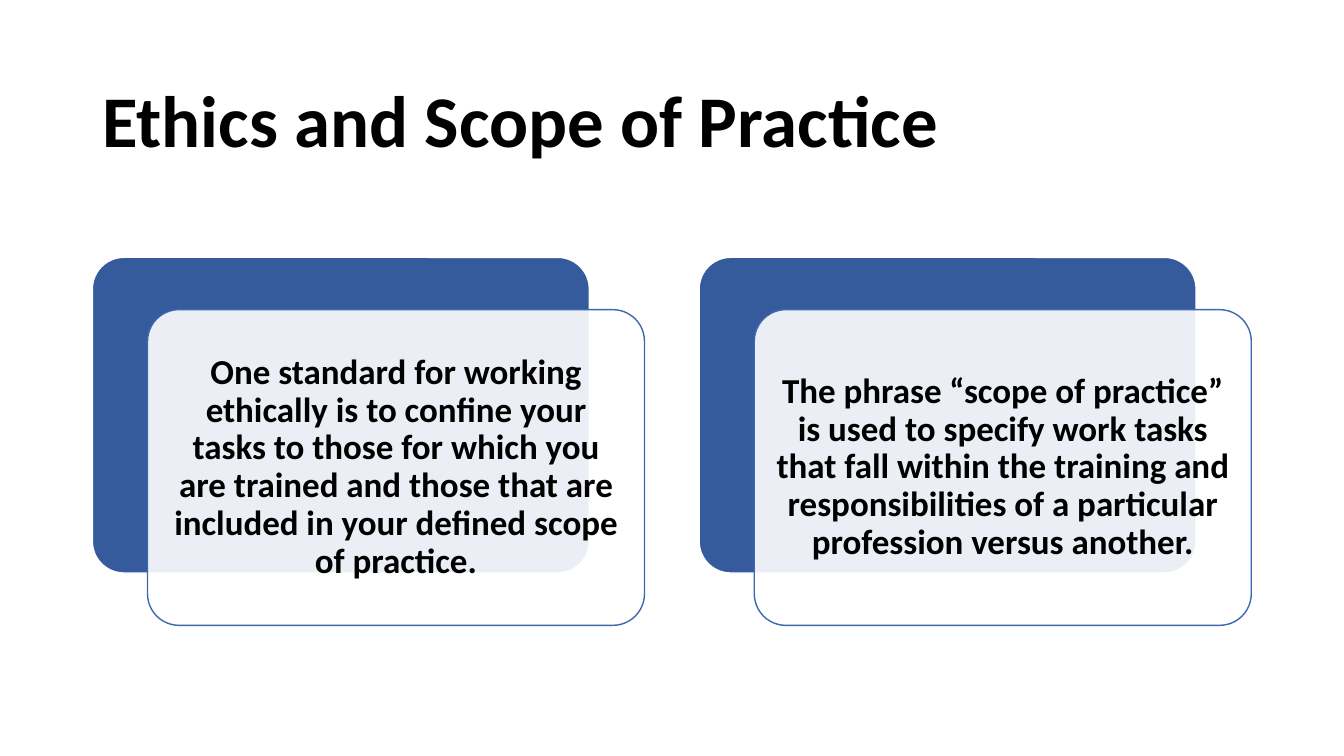
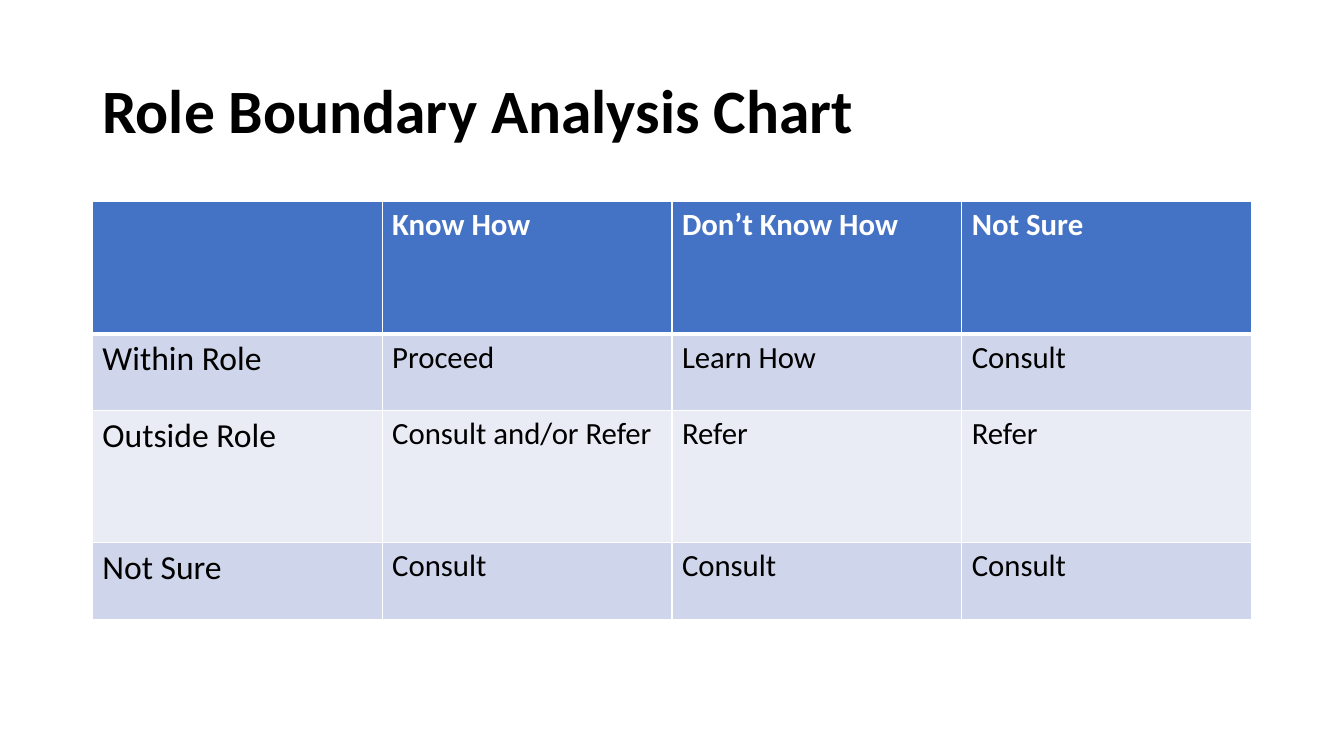
from lxml import etree
from pptx import Presentation
from pptx.dml.color import RGBColor
from pptx.enum.shapes import MSO_SHAPE
from pptx.enum.text import MSO_ANCHOR, PP_ALIGN
from pptx.oxml.ns import qn
from pptx.util import Pt

ROUNDED = MSO_SHAPE.ROUNDED_RECTANGLE
MIDDLE = MSO_ANCHOR.MIDDLE
CENTER = PP_ALIGN.CENTER

FONT = "Calibri"
BLACK = RGBColor(0x00, 0x00, 0x00)
WHITE = RGBColor(0xFF, 0xFF, 0xFF)
CARD_BLUE = RGBColor(0x36, 0x5B, 0x9D)
CARD_LINE = RGBColor(0x3E, 0x67, 0xB2)
HEADER_BLUE = RGBColor(0x44, 0x72, 0xC4)
BAND_DARK = RGBColor(0xCF, 0xD5, 0xEA)
BAND_LIGHT = RGBColor(0xE9, 0xEB, 0xF5)

LEFT, WIDTH = 66, 828
CARD_W, CARD_H, CARD_TOP = 355, 225.5, 183.8
CARD_PITCH = 433.4
FRONT_DX, FRONT_DY = 39.4, 37.4
NBSP = chr(160)  # keeps the last two words of a card together

CARDS = [
    "One standard for working ethically is to confine your tasks to those for "
    "which you are trained and those that are included in your defined scope "
    f"of{NBSP}practice.",
    "The phrase “scope of practice” is used to specify work tasks that fall "
    "within the training and responsibilities of a particular profession "
    f"versus{NBSP}another.",
]
ROWS = [
    ["", "Know How", "Don’t Know How", "Not Sure"],
    ["Within Role", "Proceed", "Learn How", "Consult"],
    ["Outside Role", "Consult and/or Refer", "Refer", "Refer"],
    ["Not Sure", "Consult", "Consult", "Consult"],
]
ROW_HEIGHTS = [94.4, 54.8, 94.4, 54.8]


def write(p, text, size, color=BLACK, bold=True):
    p.text = text
    p.font.name = FONT
    p.font.size = Pt(size)
    p.font.bold = bold
    p.font.color.rgb = color


def add_title(s, text, top, height, size):
    box = s.shapes.add_textbox(Pt(LEFT), Pt(top), Pt(WIDTH), Pt(height))
    tf = box.text_frame
    tf.word_wrap = True
    tf.vertical_anchor = MIDDLE
    p = tf.paragraphs[0]
    p.line_spacing = 0.9
    write(p, text, size)


def add_panel(s, left, top, fill, line):
    sp = s.shapes.add_shape(ROUNDED, Pt(left), Pt(top), Pt(CARD_W), Pt(CARD_H))
    sp.adjustments[0] = 0.1
    sp.shadow.inherit = False
    sp.fill.solid()
    sp.fill.fore_color.rgb = fill
    sp.line.color.rgb = line
    sp.line.width = Pt(1)
    return sp


def set_opacity(sp, percent):
    color = sp.fill._xPr.find(qn("a:solidFill"))[0]
    etree.SubElement(color, qn("a:alpha"), val=str(percent * 1000))


def add_card(s, left, text):
    """Blue panel with a translucent text panel shifted over it."""
    add_panel(s, left, CARD_TOP, CARD_BLUE, WHITE)
    front = add_panel(s, left + FRONT_DX, CARD_TOP + FRONT_DY, WHITE, CARD_LINE)
    set_opacity(front, 90)
    tf = front.text_frame
    tf.word_wrap = True
    tf.vertical_anchor = MIDDLE
    tf.margin_left = tf.margin_right = tf.margin_top = tf.margin_bottom = Pt(7)
    p = tf.paragraphs[0]
    p.alignment = CENTER
    p.line_spacing = 0.9
    write(p, text, 25)


def set_borders(cell, top, bottom):
    tc_pr = cell._tc.get_or_add_tcPr()
    for side, width in (("L", 1), ("R", 1), ("T", top), ("B", bottom)):
        ln = etree.SubElement(tc_pr, qn(f"a:ln{side}"), w=str(Pt(width)))
        fill = etree.SubElement(ln, qn("a:solidFill"))
        etree.SubElement(fill, qn("a:srgbClr"), val=str(WHITE))


def add_role_table(s, top):
    table = s.shapes.add_table(len(ROWS), len(ROWS[0]), Pt(LEFT), Pt(top),
                               Pt(WIDTH), Pt(sum(ROW_HEIGHTS))).table
    for i, (texts, height) in enumerate(zip(ROWS, ROW_HEIGHTS)):
        table.rows[i].height = Pt(height)
        header = i == 0
        band = HEADER_BLUE if header else BAND_DARK if i % 2 else BAND_LIGHT
        for j, text in enumerate(texts):
            cell = table.cell(i, j)
            set_borders(cell, top=3 if i == 1 else 1, bottom=3 if header else 1)
            cell.fill.solid()
            cell.fill.fore_color.rgb = band
            size = 24 if j == 0 and not header else 22
            write(cell.text_frame.paragraphs[0], text, size,
                  WHITE if header else BLACK, bold=header)


def main():
    prs = Presentation()
    prs.slide_width, prs.slide_height = Pt(960), Pt(540)
    blank = prs.slide_layouts[6]

    s = prs.slides.add_slide(blank)
    add_title(s, "Ethics and Scope of Practice", 44, 89, 52)
    for i, text in enumerate(CARDS):
        add_card(s, LEFT + i * CARD_PITCH, text)

    s = prs.slides.add_slide(blank)
    add_title(s, "Role Boundary Analysis Chart", 28.8, 104.4, 44)
    add_role_table(s, 144)

    prs.save("out.pptx")


if __name__ == "__main__":
    main()
